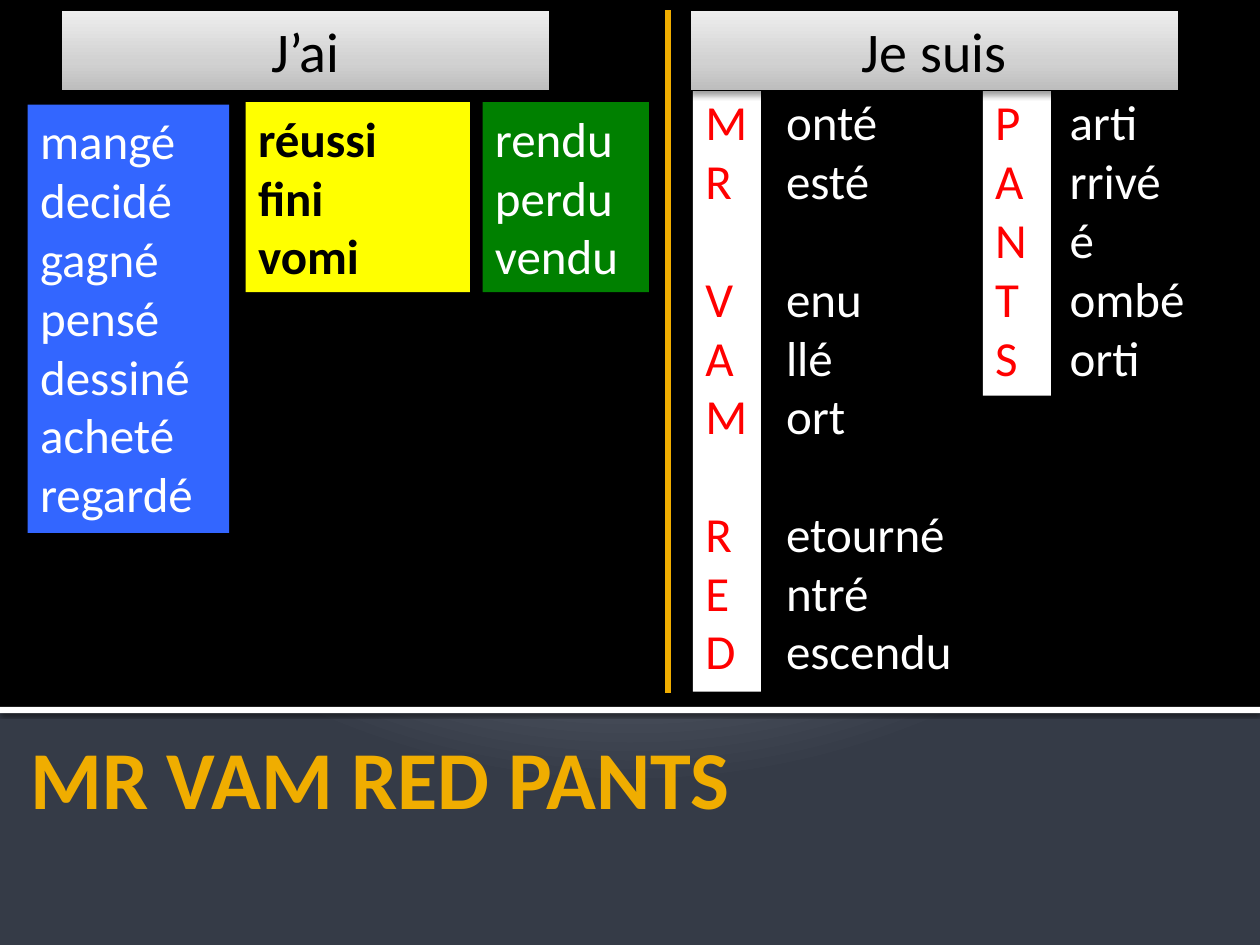
from dataclasses import dataclass

from pptx import Presentation
from pptx.dml.color import RGBColor
from pptx.enum.shapes import MSO_CONNECTOR, MSO_SHAPE
from pptx.enum.text import MSO_ANCHOR, MSO_AUTO_SIZE, PP_ALIGN
from pptx.oxml import parse_xml
from pptx.oxml.ns import nsdecls
from pptx.util import Inches, Pt

FONT = "Calibri"
WORD_SIZE = 28
GROUP_GAP = Pt(33.5)
COLORS = {
    "black": "000000",
    "white": "FFFFFF",
    "red": "FF0000",
    "gold": "F0AD00",
    "green": "008000",
    "yellow": "FFFF00",
    "blue": "3366FF",
}
HEADER_STOPS = [(0, "BDBDBD"), (35, "D1D1D1"), (100, "EEEEEE")]
BACKGROUND_STOPS = [(0, "C1C5D3"), (12, "C1C5D3"), (20, "BFC4D2"), (100, "353B47")]


@dataclass
class WordList:
    left: float
    top: float
    width: float
    height: float
    groups: list[str]
    color: str = "white"
    fill: str | None = None
    bold: bool = False


@dataclass
class Header:
    left: float
    text: str


WORD_LISTS = [
    WordList(6.14, 0.68, 1.84, 4.81, ["onté esté", "enu llé ort", "etourné ntré escendu"]),
    WordList(5.5, 0.68, 0.54, 4.81, ["M R", "V A M", "R E D"], "red", "white"),
    WordList(8.39, 0.68, 1.45, 2.46, ["arti rrivé é ombé orti"]),
    WordList(7.8, 0.68, 0.54, 2.46, ["P A N T S"], "red", "white"),
    WordList(3.83, 0.81, 1.32, 1.51, ["rendu perdu vendu"], fill="green"),
    WordList(1.95, 0.81, 1.78, 1.51, ["réussi fini vomi"], "black", "yellow", True),
    WordList(0.22, 0.83, 1.6, 3.4,
             ["mangé decidé gagné pensé dessiné acheté regardé"], fill="blue"),
]
HEADERS = [Header(5.48, "Je suis"), Header(0.49, "J’ai")]


def rgb(name: str) -> RGBColor:
    return RGBColor.from_string(COLORS[name])


def gradient_xml(stops: list[tuple[int, str]], direction: str) -> str:
    gs = "".join(f'<a:gs pos="{pos * 1000}"><a:srgbClr val="{color}"/></a:gs>'
                 for pos, color in stops)
    return (f'<a:gradFill {nsdecls("a")} rotWithShape="1">'
            f'<a:gsLst>{gs}</a:gsLst>{direction}</a:gradFill>')


def add_shadow(sp, alpha: int, blur: float, dist: float) -> None:
    sp._element.spPr.append(parse_xml(
        f'<a:effectLst {nsdecls("a")}><a:outerShdw blurRad="{Pt(blur)}" '
        f'dist="{Pt(dist)}" dir="5400000" rotWithShape="0"><a:srgbClr val="000000">'
        f'<a:alpha val="{alpha * 1000}"/></a:srgbClr></a:outerShdw></a:effectLst>'))


def set_background(slide) -> None:
    focus = ('<a:path path="circle">'
             '<a:fillToRect l="10000" t="-25000" r="10000" b="125000"/></a:path>')
    slide._element.cSld.insert(0, parse_xml(
        f'<p:bg {nsdecls("p", "a")}><p:bgPr>{gradient_xml(BACKGROUND_STOPS, focus)}'
        '<a:effectLst/></p:bgPr></p:bg>'))


def add_rect(slide, left: float, top: float, width: float, height: float, fill: str):
    sp = slide.shapes.add_shape(MSO_SHAPE.RECTANGLE, Inches(left), Inches(top),
                                Inches(width), Inches(height))
    sp.fill.solid()
    sp.fill.fore_color.rgb = rgb(fill)
    sp.line.fill.background()
    return sp


def format_text(p, size: float, color: str, bold: bool = False,
                align: PP_ALIGN = PP_ALIGN.LEFT) -> None:
    p.alignment = align
    for r in p.runs:
        r.font.name = FONT
        r.font.size = Pt(size)
        r.font.bold = bold
        r.font.color.rgb = rgb(color)


def add_word_list(slide, item: WordList) -> None:
    box = (item.left, item.top, item.width, item.height)
    if item.fill:
        sp = add_rect(slide, *box, item.fill)
        sp.shadow.inherit = False
    else:
        sp = slide.shapes.add_textbox(*map(Inches, box))
    tf = sp.text_frame
    tf.word_wrap = True
    tf.vertical_anchor = MSO_ANCHOR.TOP
    groups = [group.split() for group in item.groups]
    tf.text = "\n".join(word for group in groups for word in group)
    for p in tf.paragraphs:
        format_text(p, WORD_SIZE, item.color, item.bold)
    start = 0
    for group in groups[:-1]:
        start += len(group)
        tf.paragraphs[start].space_before = GROUP_GAP


def add_header(slide, header: Header) -> None:
    sp = add_rect(slide, header.left, 0.08, 3.87, 0.64, "white")
    spPr = sp._element.spPr
    solid = spPr.find("{http://schemas.openxmlformats.org/drawingml/2006/main}solidFill")
    spPr.replace(solid, parse_xml(
        gradient_xml(HEADER_STOPS, '<a:lin ang="16200000" scaled="1"/>')))
    sp.line.color.rgb = rgb("black")
    sp.line.width = Pt(0.5)
    add_shadow(sp, 38, 3.5, 2)
    tf = sp.text_frame
    tf.text = header.text
    tf.vertical_anchor = MSO_ANCHOR.TOP
    format_text(tf.paragraphs[0], 32, "black", align=PP_ALIGN.CENTER)


def add_divider(slide) -> None:
    line = slide.shapes.add_connector(MSO_CONNECTOR.STRAIGHT, Inches(5.3), Inches(0.08),
                                      Inches(5.3), Inches(5.5))
    line.line.color.rgb = rgb("gold")
    line.line.width = Pt(3.78)
    add_shadow(line, 38, 3.5, 2)


def set_title(slide, text: str) -> None:
    title = slide.shapes.title
    title.left, title.top = Inches(0.14), Inches(5.77)
    title.width, title.height = Inches(9.86), Inches(1.55)
    tf = title.text_frame
    tf.text = text
    tf.auto_size = MSO_AUTO_SIZE.NONE
    tf.vertical_anchor = MSO_ANCHOR.TOP
    tf.margin_left, tf.margin_right = Inches(0.1), Inches(0.05)
    tf.margin_top = tf.margin_bottom = 0
    format_text(tf.paragraphs[0], 47, "gold", bold=True)


def main() -> None:
    prs = Presentation()
    prs.slide_width, prs.slide_height = Inches(10), Inches(7.5)
    slide = prs.slides.add_slide(prs.slide_layouts[5])
    set_background(slide)
    panel = add_rect(slide, 0, 0, 10, 5.62, "black")
    panel.shadow.inherit = False
    band = add_rect(slide, 0, 5.61, 10, 0.05, "white")
    add_shadow(band, 60, 2.5, 0.8)
    for item in WORD_LISTS:
        add_word_list(slide, item)
    for header in HEADERS:
        add_header(slide, header)
    add_divider(slide)
    set_title(slide, "MR VAM RED PANTS")
    prs.save("out.pptx")


if __name__ == "__main__":
    main()
